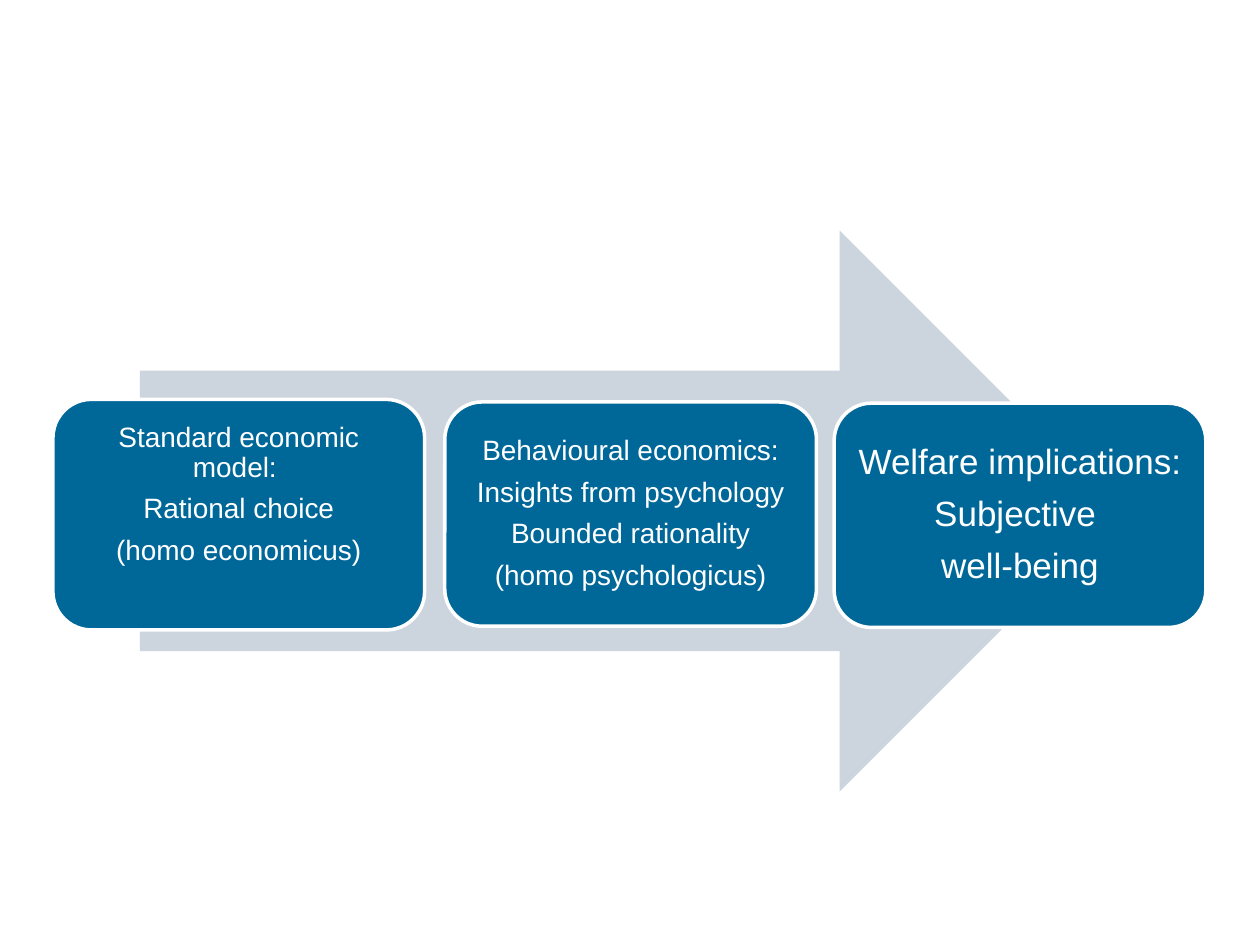
import pptx
import pptx.util
import pptx.dml.color
import pptx.enum.shapes
import pptx.enum.text
from dataclasses import dataclass

Inches, Pt = pptx.util.Inches, pptx.util.Pt
RGB = pptx.dml.color.RGBColor
SHAPES = pptx.enum.shapes.MSO_SHAPE


@dataclass(frozen=True)
class Theme:
    font: str = "Arial"
    arrow: RGB = RGB(0xCC, 0xD4, 0xDE)
    stage: RGB = RGB(0x00, 0x68, 0x99)
    white: RGB = RGB(0xFF, 0xFF, 0xFF)
    body_size: int = 16
    welfare_size: int = 20
    outline: int = 2
    line_spacing: float = 0.9
    gap_ratio: float = 0.4  # paragraph gap as a share of the type size


theme = Theme()

deck = pptx.Presentation()
deck.slide_width, deck.slide_height = Inches(10), Inches(7.5)
slide = deck.slides.add_slide(deck.slide_layouts[6])

# Background arrow
progress = slide.shapes.add_shape(
    SHAPES.RIGHT_ARROW, Inches(1.11), Inches(1.83), Inches(7.78), Inches(4.45))
progress.shadow.inherit = False
progress.fill.solid()
progress.fill.fore_color.rgb = theme.arrow
progress.line.fill.background()

# Stages, back to front: left, top, height, bottom inset, type size, lines
stages = [
    (6.62, 3.20, 1.78, 0.07, theme.welfare_size,
     ["Welfare implications:", "Subjective ", "well-being"]),
    (3.53, 3.19, 1.78, 0.07, theme.body_size,
     ["Behavioural economics:", "Insights from psychology",
      "Bounded rationality", "(homo psychologicus)"]),
    # The deeper bottom inset lifts the text by half a line
    (0.42, 3.17, 1.83, 0.39, theme.body_size,
     ["Standard economic model: ", "Rational choice", "(homo economicus)"]),
]

for left, top, height, bottom_inset, size, lines in stages:
    stage = slide.shapes.add_shape(
        SHAPES.ROUNDED_RECTANGLE, Inches(left), Inches(top), Inches(2.95), Inches(height))
    stage.shadow.inherit = False
    stage.fill.solid()
    stage.fill.fore_color.rgb = theme.stage
    stage.line.color.rgb = theme.white
    stage.line.width = Pt(theme.outline)

    wording = stage.text_frame
    wording.word_wrap = True
    wording.vertical_anchor = pptx.enum.text.MSO_ANCHOR.MIDDLE
    wording.margin_left = wording.margin_right = wording.margin_top = Inches(0.07)
    wording.margin_bottom = Inches(bottom_inset)

    for number, line in enumerate(lines):
        paragraph = wording.add_paragraph() if number else wording.paragraphs[0]
        paragraph.alignment = pptx.enum.text.PP_ALIGN.CENTER
        paragraph.line_spacing = theme.line_spacing
        paragraph.space_after = Pt(size * theme.gap_ratio)
        run = paragraph.add_run()
        run.text = line
        run.font.name = theme.font
        run.font.size = Pt(size)
        run.font.color.rgb = theme.white

deck.save("out.pptx")
